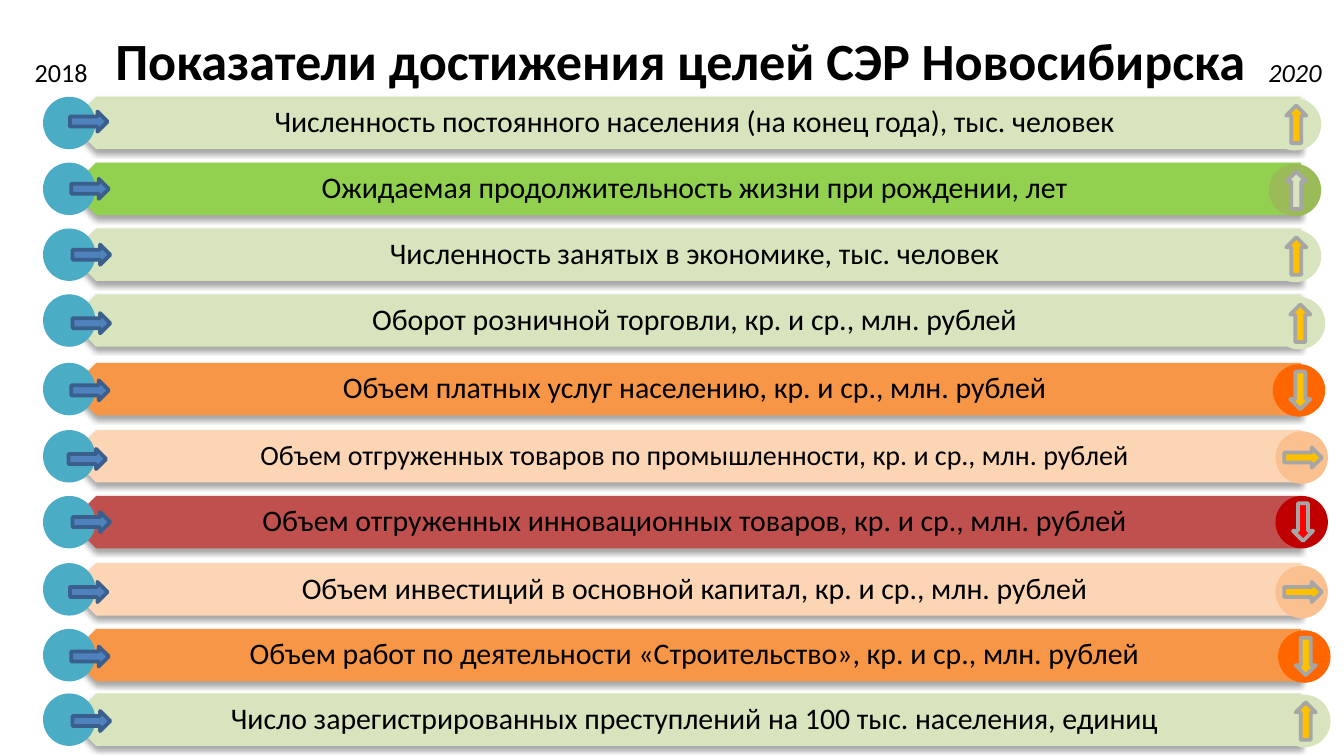
from lxml.etree import SubElement
from dataclasses import dataclass

from pptx import Presentation
from pptx.dml.color import RGBColor
from pptx.enum.shapes import MSO_SHAPE as Shape
from pptx.enum.text import MSO_ANCHOR as Anchor, MSO_AUTO_SIZE as AutoSize, PP_ALIGN as Align
from pptx.oxml.ns import qn
from pptx.util import Inches, Pt


@dataclass(frozen=True)
class Theme:
    font: str = "Calibri"
    text: str = "000000"
    title_size: int = 28
    year_size: int = 14
    row_size: int = 16
    small_row_size: int = 15
    start: str = "4BACC6"
    start_arrow: str = "4F81BD"
    start_line: str = "3A5F8C"
    mark_line: str = "A6A6A6"
    pale_green: str = "D7E4BD"
    green: str = "92D050"
    olive: str = "9BBB59"
    orange: str = "F79646"
    bright_orange: str = "FF6600"
    peach: str = "FCD5B5"
    dark_peach: str = "FAC090"
    brick: str = "C0504D"
    dark_red: str = "C00000"
    red: str = "FF0000"
    amber: str = "FFC000"


THEME = Theme()
SLIDE_WIDTH = 10
SLIDE_HEIGHT = SLIDE_WIDTH * 9 / 16
ROW_HEIGHT = 0.39
ARROW_WIDTH, ARROW_HEIGHT = 0.28, 0.15
LONGEST_ROW = 65
UP, DOWN, LEVEL = 270, 90, 0

# Bar, circle and arrow colours of each kind of result, with the arrow's turn
GROWTH = (THEME.pale_green, THEME.pale_green, THEME.amber, UP)
STRONG_GROWTH = (THEME.green, THEME.olive, THEME.pale_green, UP)
DECLINE = (THEME.orange, THEME.bright_orange, THEME.amber, DOWN)
STRONG_DECLINE = (THEME.brick, THEME.dark_red, THEME.red, DOWN)
STABLE = (THEME.peach, THEME.dark_peach, THEME.amber, LEVEL)

# Text, size, result, bar top, start arrow (left, top), result circle (left, top)
INDICATORS = [
    ("Численность постоянного населения (на конец года), тыс. человек",
     THEME.row_size, GROWTH, 0.72, (0.52, 0.83), (9.44, 0.73)),
    ("Ожидаемая продолжительность жизни при рождении, лет",
     THEME.row_size, STRONG_GROWTH, 1.21, (0.53, 1.33), (9.44, 1.22)),
    ("Численность занятых в экономике, тыс. человек",
     THEME.row_size, GROWTH, 1.7, (0.54, 1.82), (9.44, 1.71)),
    ("Оборот розничной торговли, кр. и ср., млн. рублей",
     THEME.row_size, GROWTH, 2.19, (0.54, 2.33), (9.47, 2.21)),
    ("Объем платных услуг населению, кр. и ср., млн. рублей",
     THEME.row_size, DECLINE, 2.7, (0.53, 2.83), (9.47, 2.71)),
    ("Объем отгруженных товаров по промышленности, кр. и ср., млн. рублей",
     THEME.small_row_size, STABLE, 3.2, (0.51, 3.34), (9.49, 3.21)),
    ("Объем отгруженных инновационных товаров, кр. и ср., млн. рублей",
     THEME.row_size, STRONG_DECLINE, 3.69, (0.54, 3.81), (9.49, 3.69)),
    ("Объем инвестиций в основной капитал, кр. и ср., млн. рублей",
     THEME.row_size, STABLE, 4.19, (0.52, 4.33), (9.49, 4.21)),
    ("Объем работ по деятельности «Строительство», кр. и ср., млн. рублей",
     THEME.row_size, DECLINE, 4.68, (0.53, 4.81), (9.51, 4.69)),
    ("Число зарегистрированных преступлений на 100 тыс. населения, единиц",
     THEME.row_size, GROWTH, 5.16, (0.54, 5.29), (9.51, 5.17)),
]


def place(shape, left, top, width, height):
    shape.left, shape.top = Inches(left), Inches(top)
    shape.width, shape.height = Inches(width), Inches(height)


def write(shape, text, size, align=Align.LEFT, bold=False, italic=False):
    frame = shape.text_frame
    frame.text = text
    para = frame.paragraphs[0]
    para.alignment = align
    font = para.runs[0].font
    font.name, font.size = THEME.font, Pt(size)
    font.bold, font.italic = bold, italic
    font.color.rgb = RGBColor.from_string(THEME.text)
    return para


def add_shape(page, kind, area, fill, line=None, turn=0):
    shape = page.shapes.add_shape(kind, *map(Inches, area))
    shape.shadow.inherit = False
    shape.rotation = turn
    shape.fill.solid()
    shape.fill.fore_color.rgb = RGBColor.from_string(fill)
    if line:
        shape.line.color.rgb = RGBColor.from_string(line)
        shape.line.width = Pt(2)
    else:
        shape.line.fill.background()
    return shape


def add_circle(page, left, top, fill):
    add_shape(page, Shape.OVAL, (left, top, ROW_HEIGHT, ROW_HEIGHT), fill)


def add_arrow(page, left, top, fill, line, turn=LEVEL):
    area = (left, top, ARROW_WIDTH, ARROW_HEIGHT)
    add_shape(page, Shape.RIGHT_ARROW, area, fill, line, turn)


def drop_shadow(shape):
    effects = shape.element.spPr.find(qn("a:effectLst"))
    shadow = SubElement(effects, qn("a:outerShdw"), blurRad=str(Pt(3.1)),
                        dist=str(Pt(1.8)), dir="5400000", rotWithShape="0")
    color = SubElement(shadow, qn("a:srgbClr"), val="000000")
    SubElement(color, qn("a:alpha"), val="35000")


def add_bar(page, top, text, fill, size):
    drop_shadow(add_shape(page, Shape.PENTAGON, (0.52, top, 9.16, ROW_HEIGHT), fill, turn=180))
    box = page.shapes.add_textbox(*map(Inches, (0.61, top, 9.07, ROW_HEIGHT)))
    frame = box.text_frame
    frame.word_wrap = True
    frame.vertical_anchor = Anchor.MIDDLE
    frame.margin_left, frame.margin_right = Inches(0.17), Inches(0.12)
    frame.margin_top = frame.margin_bottom = Inches(0.07)
    write(box, text, size, Align.CENTER).line_spacing = 0.9


def add_result(page, left, top, circle, arrow, turn):
    add_circle(page, left, top, circle)
    arrow_left = left + (ROW_HEIGHT - ARROW_WIDTH) / 2 + 0.01
    arrow_top = top + (ROW_HEIGHT - ARROW_HEIGHT) / 2
    add_arrow(page, arrow_left, arrow_top, arrow, THEME.mark_line, turn)


def add_year(page, left, text, italic=False):
    box = page.shapes.add_textbox(*map(Inches, (left, 0.37, 0.7, 0.34)))
    box.text_frame.word_wrap = True
    box.text_frame.auto_size = AutoSize.SHAPE_TO_FIT_TEXT
    write(box, text, THEME.year_size, italic=italic)


def main():
    deck = Presentation()
    deck.slide_width, deck.slide_height = Inches(SLIDE_WIDTH), Inches(SLIDE_HEIGHT)
    page = deck.slides.add_slide(deck.slide_layouts[5])

    # Title
    title = page.shapes.title
    place(title, -0.14, -0.02, 10.4, 0.93)
    title.text_frame.vertical_anchor = Anchor.MIDDLE
    write(title, "Показатели достижения целей СЭР Новосибирска",
          THEME.title_size, Align.CENTER, bold=True)

    # Indicator bars with their starting points
    for text, size, (fill, *_), top, start, _ in INDICATORS:
        add_bar(page, top, text, fill, size)
        add_circle(page, 0.32, top, THEME.start)
        add_arrow(page, *start, THEME.start_arrow, THEME.start_line)

    # Years
    add_year(page, 0.16, "2018")
    add_year(page, 9.34, "2020", italic=True)

    # Results
    for _, _, (_, circle, arrow, turn), _, _, mark in INDICATORS:
        add_result(page, *mark, circle, arrow, turn)

    deck.save("out.pptx")


if __name__ == "__main__":
    main()
